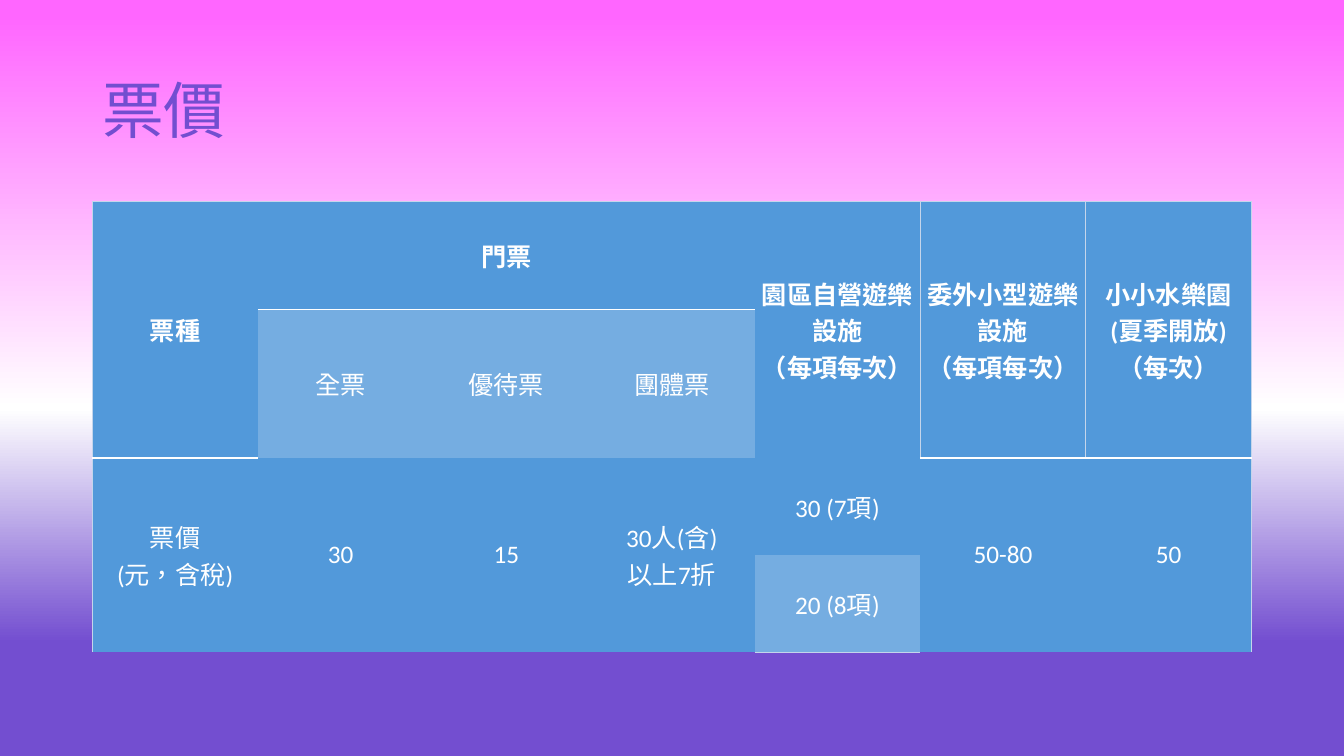
from pptx import Presentation
from pptx.dml.color import RGBColor
from pptx.enum.lang import MSO_LANGUAGE_ID
from pptx.enum.text import MSO_ANCHOR, PP_ALIGN
from pptx.oxml import parse_xml
from pptx.oxml.ns import nsdecls
from pptx.util import Pt

COLORS = {
    "pink": "FF66FF", "white": "FFFFFF", "violet": "734ED0",
    "blue": "5299DA", "light_blue": "75ADE1", "edge": "C4D5EB",
}
CJK_FONT = "Noto Sans CJK JP"


def write_text(frame, text, size, color, font="Calibri", bold=False, align=PP_ALIGN.LEFT):
    frame.word_wrap = True
    frame.vertical_anchor = MSO_ANCHOR.MIDDLE
    paragraph = frame.paragraphs[0]
    paragraph.alignment = align
    for number, line in enumerate(text.split("\n")):
        if number:
            paragraph.add_line_break()
        run = paragraph.add_run()
        run.text = line
        run.font.size = Pt(size)
        run.font.bold = bold
        run.font.name = font
        run.font.language_id = MSO_LANGUAGE_ID.TRADITIONAL_CHINESE
        run.font.color.rgb = RGBColor.from_string(COLORS[color])
        run.font._element.append(
            parse_xml(f'<a:ea {nsdecls("a")} typeface="{CJK_FONT}"/>'))
    return paragraph


def set_borders(cell, edges):
    """Draw the given sides as {side: (color, width)} and clear the others."""
    properties = cell._tc.get_or_add_tcPr()
    for side in "LRTB":
        if side in edges:
            color, width = edges[side]
            paint = f'<a:solidFill><a:srgbClr val="{COLORS[color]}"/></a:solidFill>'
        else:
            width, paint = 0, "<a:noFill/>"
        properties.append(parse_xml(
            f'<a:ln{side} {nsdecls("a")} w="{Pt(width)}">{paint}</a:ln{side}>'))


presentation = Presentation()
presentation.slide_width, presentation.slide_height = Pt(960), Pt(540)
slide = presentation.slides.add_slide(presentation.slide_layouts[6])

# Background gradient, top to bottom
stops = "".join(
    f'<a:gs pos="{position * 1000}"><a:srgbClr val="{COLORS[color]}"/></a:gs>'
    for position, color in [(2, "pink"), (54, "white"), (85, "violet")])
slide._element.cSld.insert(0, parse_xml(
    f'<p:bg {nsdecls("p", "a")}><p:bgPr><a:gradFill rotWithShape="1">'
    f'<a:gsLst>{stops}</a:gsLst><a:lin ang="5400000" scaled="0"/></a:gradFill>'
    '<a:effectLst/></p:bgPr></p:bg>'))

heading = slide.shapes.add_textbox(Pt(66), Pt(28.75), Pt(828), Pt(104.4))
write_text(heading.text_frame, "票價", 44, "violet", font=CJK_FONT).line_spacing = 0.9

# Ticket prices
ROW_HEIGHTS = [77, 106, 69.5, 69.5]
COLUMNS = 7
prices = slide.shapes.add_table(
    len(ROW_HEIGHTS), COLUMNS, Pt(66), Pt(144), Pt(828), Pt(sum(ROW_HEIGHTS))).table
prices.first_row = prices.horz_banding = False
for row, height in zip(prices.rows, ROW_HEIGHTS):
    row.height = Pt(height)
for column in prices.columns:
    column.width = Pt(828 / COLUMNS)

# (row, column): text, rows spanned, columns spanned
entries = {
    (0, 0): ("票種", 2, 1),
    (0, 1): ("門票", 1, 3),
    (0, 4): ("園區自營遊樂設施\n（每項每次）", 2, 1),
    (0, 5): ("委外小型遊樂設施\n（每項每次）", 2, 1),
    (0, 6): ("小小水樂園\n(夏季開放)\n（每次）", 2, 1),
    (1, 1): ("全票", 1, 1),
    (1, 2): ("優待票", 1, 1),
    (1, 3): ("團體票", 1, 1),
    (2, 0): ("票價\n(元，含稅)", 2, 1),
    (2, 1): ("30", 2, 1),
    (2, 2): ("15", 2, 1),
    (2, 3): ("30人(含)\n以上7折", 2, 1),
    (2, 4): ("30 (7項)", 1, 1),
    (2, 5): ("50-80", 2, 1),
    (2, 6): ("50", 2, 1),
    (3, 4): ("20 (8項)", 1, 1),
}
light_cells = {(1, 1), (1, 2), (1, 3), (3, 4)}
thin, rule, strong = ("edge", 0.5), ("white", 1), ("white", 1.5)

for r in range(len(ROW_HEIGHTS)):
    for c in range(COLUMNS):
        cell = prices.cell(r, c)
        edges = {}
        if c == 0 or (r < 2 and c in (5, 6)):
            edges["L"] = thin
        if c == COLUMNS - 1 or (r < 2 and c in (4, 5)):
            edges["R"] = thin
        if r == 0:
            edges["T"] = thin
        if r == len(ROW_HEIGHTS) - 1:
            edges["B"] = thin
        if c in (1, 2, 3) and r < 2:
            edges["B" if r == 0 else "T"] = rule
            if r == 1:
                edges.pop("B", None)
        if c in (0, 5, 6) and r in (1, 2):
            edges["B" if r == 1 else "T"] = strong
        set_borders(cell, edges)
        cell.fill.solid()
        cell.fill.fore_color.rgb = RGBColor.from_string(
            COLORS["light_blue" if (r, c) in light_cells else "blue"])

for (r, c), (text, row_span, column_span) in entries.items():
    cell = prices.cell(r, c)
    if row_span * column_span > 1:
        cell.merge(prices.cell(r + row_span - 1, c + column_span - 1))
    cell.margin_left = cell.margin_right = cell.margin_top = cell.margin_bottom = Pt(2.25)
    write_text(cell.text_frame, text, 18, "white", bold=r == 0, align=PP_ALIGN.CENTER)
    cell.vertical_anchor = MSO_ANCHOR.MIDDLE

presentation.save("out.pptx")
